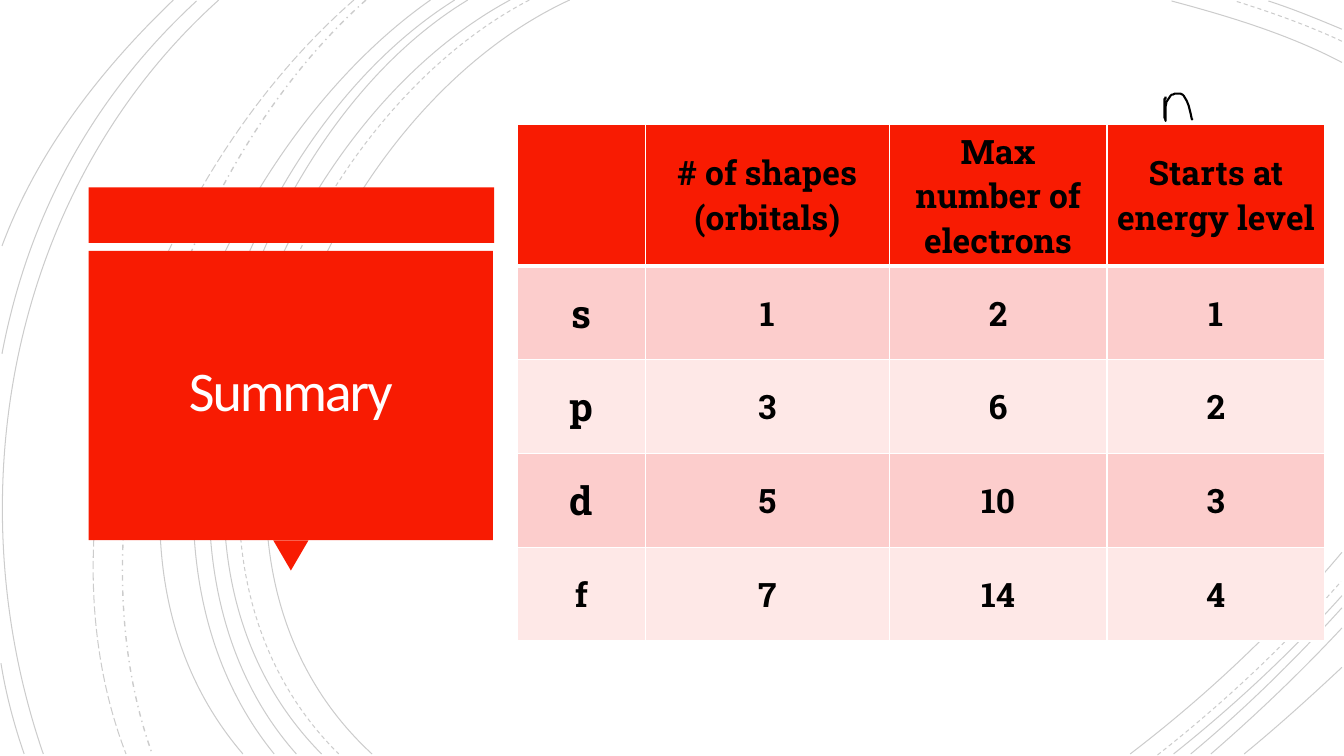
from lxml import etree
from pptx import Presentation
from pptx.dml.color import RGBColor
from pptx.enum.dml import MSO_LINE
from pptx.enum.shapes import MSO_SHAPE
from pptx.enum.text import MSO_ANCHOR, PP_ALIGN
from pptx.oxml.ns import qn
from pptx.util import Inches, Pt

RED = RGBColor(0xF8, 0x1B, 0x02)
PINK = RGBColor(0xFC, 0xCD, 0xCC)
PALE_PINK = RGBColor(0xFE, 0xE8, 0xE7)
BLACK = RGBColor(0, 0, 0)
OFF_WHITE = RGBColor(0xFF, 0xFE, 0xFF)
SOLID, DASH = MSO_LINE.SOLID, MSO_LINE.DASH
DASH_DOT, LONG_DASH = MSO_LINE.DASH_DOT, MSO_LINE.LONG_DASH
RECT, TRIANGLE = MSO_SHAPE.RECTANGLE, MSO_SHAPE.ISOSCELES_TRIANGLE
CENTER, MIDDLE = PP_ALIGN.CENTER, MSO_ANCHOR.MIDDLE

ARCS = [
    (SOLID, (5.65, 0), (3.15, 1.15), (1.43, 5.4), (3.69, 7.48)),
    (SOLID, (13.31, 0.62), (12.78, 0.34), (12.18, 0.16), (11.62, 0.01)),
    (SOLID, (11.21, 7.48), (11.97, 6.9), (12.69, 6.22), (13.31, 5.48)),
    (DASH, (5.25, 0), (2.85, 1.25), (1.23, 5.37), (3.36, 7.48)),
    (DASH, (13.31, 0.41), (12.97, 0.25), (12.6, 0.12), (12.25, 0.01)),
    (DASH, (11.48, 7.49), (12.13, 6.98), (12.75, 6.4), (13.3, 5.77)),
    (SOLID, (5.06, 0), (2.7, 1.27), (1.1, 5.37), (3.19, 7.48)),
    (SOLID, (13.31, 0.29), (13.07, 0.19), (12.83, 0.09), (12.58, 0.01)),
    (SOLID, (11.64, 7.48), (12.23, 7.01), (12.8, 6.48), (13.31, 5.91)),
    (SOLID, (4.64, 0), (2.44, 1.33), (1.1, 5.41), (2.94, 7.48)),
    (SOLID, (11.81, 7.48), (12.34, 7.04), (12.84, 6.55), (13.31, 6.03)),
    (SOLID, (4.51, 0), (2.31, 1.38), (0.97, 5.33), (2.72, 7.48)),
    (SOLID, (12.01, 7.48), (12.46, 7.09), (12.9, 6.67), (13.31, 6.23)),
    (SOLID, (4.27, 0), (2.17, 1.47), (0.53, 5.29), (2.41, 7.48)),
    (SOLID, (12.34, 7.48), (12.67, 7.21), (12.99, 6.92), (13.31, 6.62)),
    (DASH_DOT, (3.63, 0), (1.76, 1.66), (0.65, 5.09), (1.51, 7.48)),
    (LONG_DASH, (3.51, 0), (1.57, 1.69), (0.29, 4.99), (1.25, 7.48)),
    (SOLID, (2.17, 0), (0.11, 1.85), (-0.46, 4.9), (0.43, 7.48)),
    (SOLID, (1.95, 0.01), (0.92, 0.96), (0.28, 2.14), (0.02, 3.51)),
    (SOLID, (0.01, 6.58), (0.06, 6.89), (0.14, 7.19), (0.24, 7.48)),
    (SOLID, (1.72, 0), (1, 0.69), (0.37, 1.5), (0.02, 2.44)),
]
PEN_STROKE = [
    (11.56, 0.96), (11.56, 0.98), (11.55, 0.98), (11.55, 1.17), (11.56, 1.19),
    (11.56, 1.2), (11.56, 1.06), (11.57, 1.01), (11.59, 0.98), (11.61, 0.95),
    (11.62, 0.94), (11.63, 0.94), (11.65, 0.93), (11.71, 0.93), (11.73, 0.94),
    (11.74, 0.95), (11.77, 1), (11.79, 1.05), (11.8, 1.09), (11.81, 1.13),
    (11.82, 1.18), (11.83, 1.19),
]
COLUMN_WIDTHS = [1.27, 2.42, 2.16, 2.16]
ROW_HEIGHTS = [1.41] + [0.93] * 4
ORBITALS = [
    ["", "# of shapes\n(orbitals)", "Max number of electrons", "Starts at energy level"],
    ["s", "1", "2", "1"],
    ["p", "3", "6", "2"],
    ["d", "5", "10", "3"],
    ["f", "7", "14", "4"],
]


def add_outline(s, points, width):
    """Draw an open black line through points given in inches."""
    start, *rest = [(Inches(x), Inches(y)) for x, y in points]
    builder = s.shapes.build_freeform(*start)
    builder.add_line_segments(rest, close=False)
    sp = builder.convert_to_shape()
    sp.shadow.inherit = False
    sp.fill.background()
    sp.line.color.rgb = BLACK
    sp.line.width = Pt(width)
    return sp


def add_arc(s, dash, controls):
    """Draw a faint cubic curve from its four control points."""
    sp = add_outline(s, controls, 1 if dash == DASH_DOT else 0.75)
    sp.line.dash_style = dash
    outline = sp._element.find(".//" + qn("a:path"))
    segments = outline.findall(qn("a:lnTo"))
    curve = etree.SubElement(outline, qn("a:cubicBezTo"))
    for segment in segments:
        curve.append(segment[0])
        outline.remove(segment)
    color = sp._element.spPr.find(".//" + qn("a:srgbClr"))
    etree.SubElement(color, qn("a:alpha"), val="20000")


def add_block(s, kind, left, top, width, height, rotation=0):
    """Add a plain red shape."""
    sp = s.shapes.add_shape(kind, Inches(left), Inches(top), Inches(width), Inches(height))
    sp.shadow.inherit = False
    sp.fill.solid()
    sp.fill.fore_color.rgb = RED
    sp.line.fill.background()
    sp.rotation = rotation


def style_paragraph(p, font, size, color, bold=False):
    """Centre a paragraph and format its runs."""
    p.alignment = CENTER
    for r in p.runs:
        r.font.name = font
        r.font.size = Pt(size)
        r.font.color.rgb = color
        r.font.bold = bold


def add_title(s, text):
    """Add the title over the red panel."""
    tf = s.shapes.add_textbox(Inches(0.97), Inches(2.57), Inches(3.83), Inches(2.69)).text_frame
    tf.word_wrap = True
    tf.vertical_anchor = MIDDLE
    tf.margin_left = tf.margin_right = tf.margin_top = tf.margin_bottom = Inches(0.25)
    p = tf.paragraphs[0]
    p.text = text
    p.line_spacing = 0.85
    style_paragraph(p, "Calibri", 40, OFF_WHITE)
    p.runs[0].font._element.set("spc", "-150")


def set_borders(cell, top, bottom):
    """Give a cell white borders, with top and bottom widths in points."""
    tc_pr = cell._tc.get_or_add_tcPr()
    for side, width in (("L", 1), ("R", 1), ("T", top), ("B", bottom)):
        ln = etree.SubElement(tc_pr, qn("a:ln" + side), w=str(Pt(width)))
        fill = etree.SubElement(ln, qn("a:solidFill"))
        etree.SubElement(fill, qn("a:srgbClr"), val="FFFFFF")


def add_orbital_table(s):
    """Add the table of orbitals with a red header and banded rows."""
    table = s.shapes.add_table(
        len(ROW_HEIGHTS), len(COLUMN_WIDTHS), Inches(5.13), Inches(1.23),
        Inches(sum(COLUMN_WIDTHS)), Inches(sum(ROW_HEIGHTS))).table
    for column, width in zip(table.columns, COLUMN_WIDTHS):
        column.width = Inches(width)
    for row, height in zip(table.rows, ROW_HEIGHTS):
        row.height = Inches(height)
    for i, values in enumerate(ORBITALS):
        for j, value in enumerate(values):
            cell = table.cell(i, j)
            set_borders(cell, 3 if i == 1 else 1, 3 if i == 0 else 1)
            cell.fill.solid()
            cell.fill.fore_color.rgb = RED if i == 0 else PINK if i % 2 else PALE_PINK
            cell.vertical_anchor = MIDDLE
            cell.text_frame.text = value
            size = 28 if value in ("s", "p", "d") else 24
            for p in cell.text_frame.paragraphs:
                style_paragraph(p, "Roboto Slab", size, BLACK, True)


def main():
    """Build the summary slide."""
    prs = Presentation()
    prs.slide_width, prs.slide_height = Inches(13.33), Inches(7.5)
    s = prs.slides.add_slide(prs.slide_layouts[6])
    for dash, *controls in ARCS:
        add_arc(s, dash, controls)
    add_block(s, RECT, 0.88, 1.86, 4.02, 0.55)
    add_block(s, TRIANGLE, 2.71, 5.36, 0.35, 0.3, 180)
    add_block(s, RECT, 0.88, 2.49, 4.01, 2.87)
    add_title(s, "Summary")
    add_orbital_table(s)
    add_outline(s, PEN_STROKE, 1.5)
    prs.save("out.pptx")


if __name__ == "__main__":
    main()
